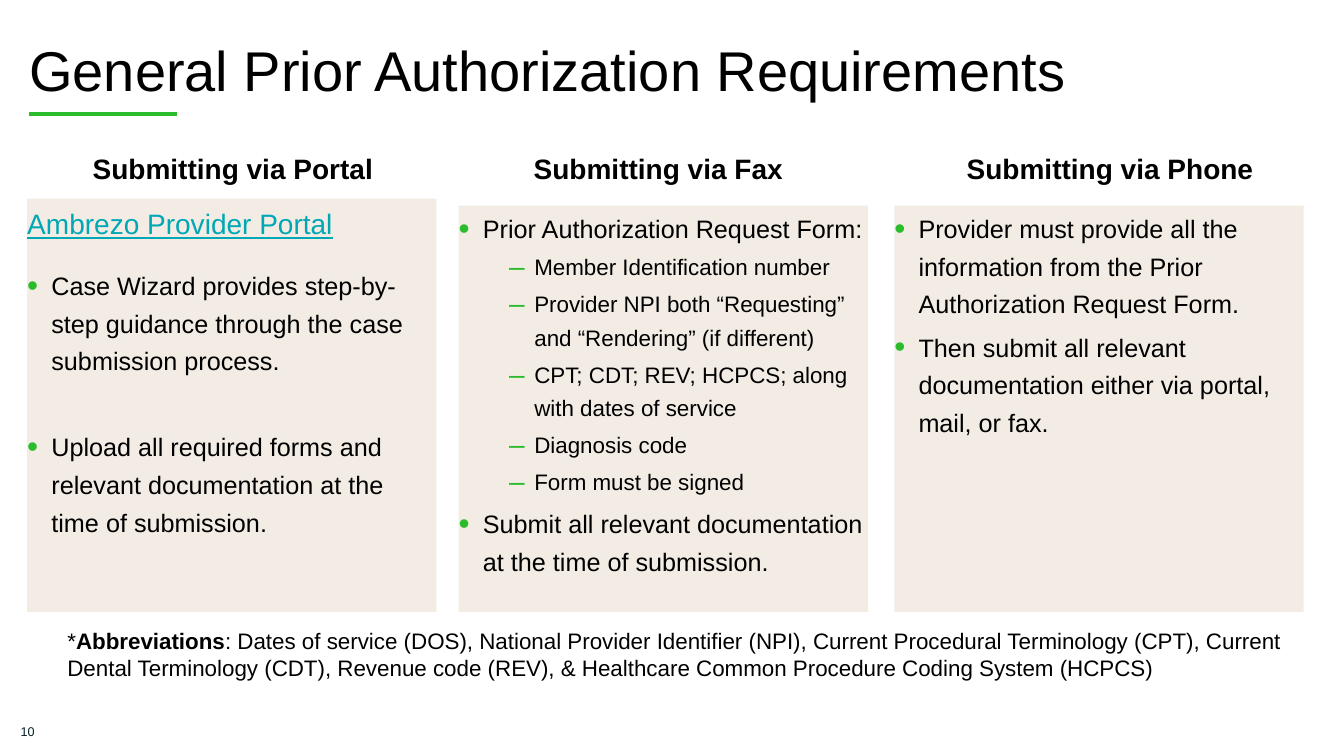
from lxml.etree import SubElement
from pptx import Presentation
from pptx.dml.color import RGBColor
from pptx.enum.shapes import MSO_CONNECTOR, MSO_SHAPE
from pptx.enum.text import MSO_ANCHOR, PP_ALIGN
from pptx.oxml.ns import qn
from pptx.util import Emu, Pt

EMU_PER_PX = 9144  # 100 px to the inch
BLACK = RGBColor(0x00, 0x00, 0x00)
NAVY = RGBColor(0x04, 0x21, 0x26)
GREEN = RGBColor(0x2B, 0xBC, 0x2B)
TEAL = RGBColor(0x00, 0xA7, 0xB5)
SAND = RGBColor(0xF2, 0xEC, 0xE4)

# Per level: bullet, text size, space before, left margin, hanging indent
LEVELS = [("•", 18, 3.8, 24, 24), ("–", 16, 2.4, 75, 25)]
WIDE_GAP = 34.4


def px(length):
    return Emu(length * EMU_PER_PX)


class SlideBuilder:
    def __init__(self, slide, font_name="Arial"):
        self.slide = slide
        self.font_name = font_name

    def style(self, run, size, color=BLACK, bold=False, underline=False):
        font = run.font
        font.name, font.size, font.bold = self.font_name, Pt(size), bold
        font.underline = underline
        font.color.rgb = color

    def frame(self, shape, anchor, inset=True):
        text_frame = shape.text_frame
        text_frame.word_wrap = True
        text_frame.vertical_anchor = anchor
        if not inset:
            text_frame.margin_left = text_frame.margin_right = 0
            text_frame.margin_top = text_frame.margin_bottom = 0
        return text_frame

    def text(self, box, pieces, size, color=BLACK, align=PP_ALIGN.LEFT,
             anchor=MSO_ANCHOR.TOP, spacing=1.0, inset=True):
        """Write one paragraph from (text, bold) pieces."""
        shape = self.slide.shapes.add_textbox(*map(px, box))
        paragraph = self.frame(shape, anchor, inset).paragraphs[0]
        paragraph.alignment, paragraph.line_spacing = align, spacing
        for words, bold in pieces:
            run = paragraph.add_run()
            run.text = words
            self.style(run, size, color, bold)

    def rule(self, left, right, y, width):
        line = self.slide.shapes.add_connector(
            MSO_CONNECTOR.STRAIGHT, px(left), px(y), px(right), px(y))
        line.line.color.rgb = GREEN
        line.line.width = Pt(width)
        SubElement(line._element.spPr, qn("a:effectLst"))

    def panel(self, box):
        shape = self.slide.shapes.add_shape(MSO_SHAPE.RECTANGLE, *map(px, box))
        shape.shadow.inherit = False
        shape.fill.solid()
        shape.fill.fore_color.rgb = SAND
        shape.line.fill.background()
        return self.frame(shape, MSO_ANCHOR.TOP, inset=False)

    def panel_paragraph(self, text_frame, words):
        """Return a left-aligned paragraph, using the empty first one if free."""
        paragraph = text_frame.paragraphs[0]
        is_first = not paragraph.runs
        if not is_first:
            paragraph = text_frame.add_paragraph()
        paragraph.text = words
        paragraph.alignment = PP_ALIGN.LEFT
        paragraph.line_spacing = 1.25
        return paragraph, is_first

    def portal_link(self, text_frame, words):
        paragraph, _ = self.panel_paragraph(text_frame, words)
        paragraph.space_after = Pt(12)
        self.style(paragraph.runs[0], 20, TEAL, underline=True)

    def bullet(self, text_frame, level, words, gap=None):
        char, size, before, margin, hanging = LEVELS[level]
        paragraph, is_first = self.panel_paragraph(text_frame, words)
        paragraph.level = level
        if not is_first:
            paragraph.space_before = Pt(gap or before)
        properties = paragraph._p.get_or_add_pPr()
        properties.set("marL", str(px(margin)))
        properties.set("indent", str(px(-hanging)))
        color = SubElement(properties, qn("a:buClr"))
        SubElement(color, qn("a:srgbClr"), val=str(GREEN))
        SubElement(properties, qn("a:buSzPct"), val="125000")
        SubElement(properties, qn("a:buFont"), typeface=self.font_name)
        SubElement(properties, qn("a:buChar"), char=char)
        self.style(paragraph.runs[0], size)


# Heading, heading box, panel box, link, bullets
COLUMNS = [
    ("Submitting via Portal", (29, 143, 404, 41), (27, 197, 406, 410),
     "Ambrezo Provider Portal", [
         (0, "Case Wizard provides step-by-step guidance through the case "
             "submission process."),
         (0, "Upload all required forms and relevant documentation at the "
             "time of submission.", WIDE_GAP),
     ]),
    ("Submitting via Fax", (450, 143, 406, 41), (455, 204, 406, 403), None, [
        (0, "Prior Authorization Request Form:"),
        (1, "Member Identification number"),
        (1, "Provider NPI both “Requesting” and “Rendering” (if different)"),
        (1, "CPT; CDT; REV; HCPCS; along with dates of service"),
        (1, "Diagnosis code"),
        (1, "Form must be signed"),
        (0, "Submit all relevant documentation at the time of submission."),
    ]),
    ("Submitting via Phone", (898, 143, 406, 41), (887, 204, 406, 403), None, [
        (0, "Provider must provide all the information from the Prior "
            "Authorization Request Form."),
        (0, "Then submit all relevant documentation either via portal, mail, "
            "or fax."),
    ]),
]

ABBREVIATIONS = [
    ("*", False),
    ("Abbreviations", True),
    (": Dates of service (DOS), National Provider Identifier (NPI), Current "
     "Procedural Terminology (CPT), Current Dental Terminology (CDT), Revenue "
     "code (REV), & Healthcare Common Procedure Coding System (HCPCS)", False),
]


def main():
    presentation = Presentation()
    presentation.slide_width, presentation.slide_height = px(1333), px(750)
    builder = SlideBuilder(
        presentation.slides.add_slide(presentation.slide_layouts[6]))

    builder.rule(29, 176, 113, 3)
    builder.text((1, 706, 53, 40), [("10", False)], 9, NAVY,
                 PP_ALIGN.CENTER, MSO_ANCHOR.MIDDLE)
    builder.text((29, 44, 1248, 57),
                 [("General Prior Authorization Requirements", False)], 40,
                 anchor=MSO_ANCHOR.MIDDLE, spacing=0.9, inset=False)

    for heading, heading_box, panel_box, link, bullets in COLUMNS:
        builder.text(heading_box, [(heading, True)], 20,
                     align=PP_ALIGN.CENTER, anchor=MSO_ANCHOR.BOTTOM,
                     spacing=1.25, inset=False)
        panel = builder.panel(panel_box)
        if link:
            builder.portal_link(panel, link)
        for item in bullets:
            builder.bullet(panel, *item)

    builder.text((57, 617, 1264, 64), ABBREVIATIONS, 16)
    presentation.save("out.pptx")


if __name__ == "__main__":
    main()
